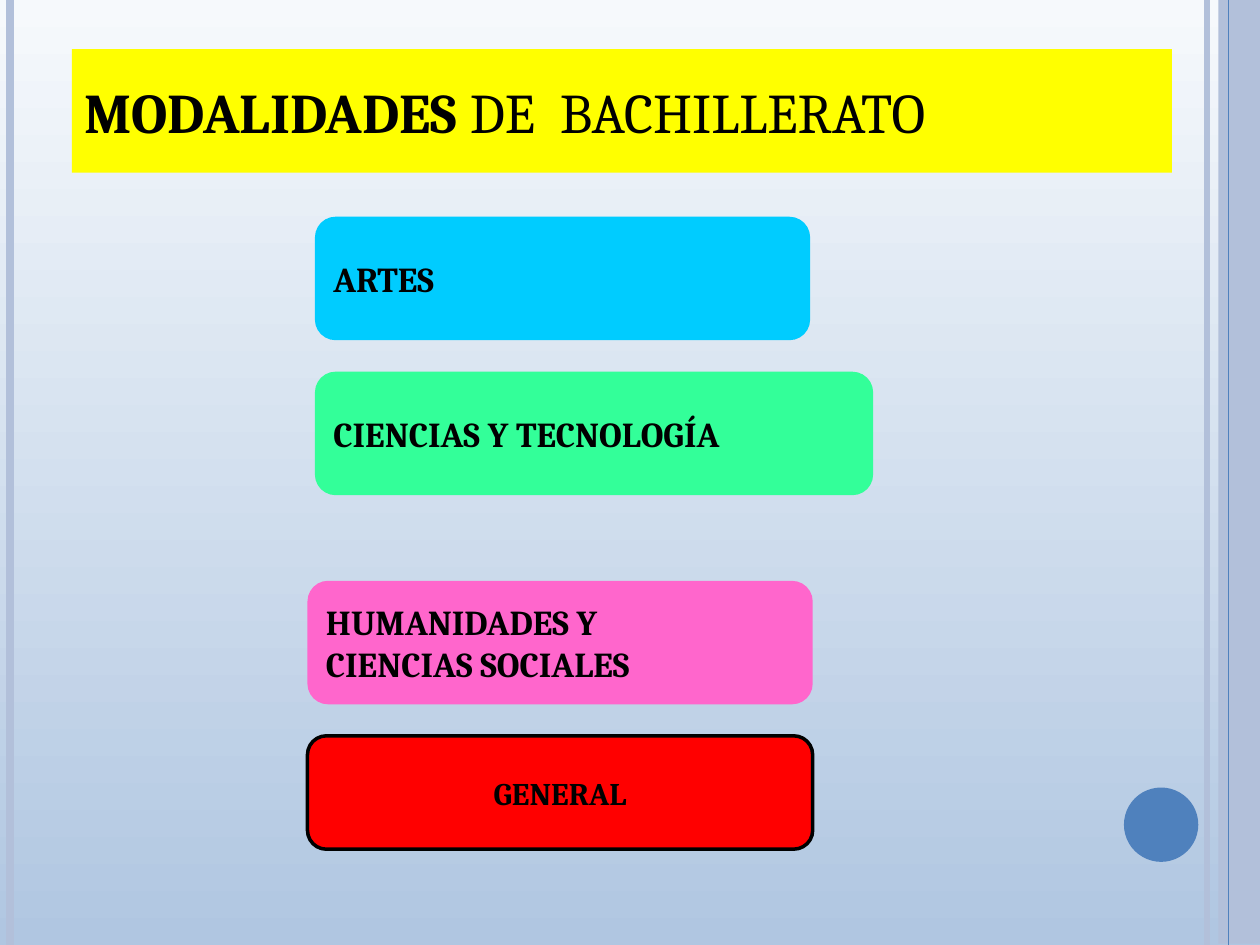
"""Build a slide that lists the kinds of bachillerato."""
from lxml.etree import SubElement
from pptx import Presentation
from pptx.dml.color import RGBColor
from pptx.enum.shapes import MSO_CONNECTOR, MSO_SHAPE
from pptx.enum.text import MSO_ANCHOR, PP_ALIGN
from pptx.oxml.ns import qn
from pptx.util import Inches, Pt

BLACK = RGBColor(0, 0, 0)
YELLOW = RGBColor(0xFF, 0xFF, 0)
CYAN = RGBColor(0, 0xCC, 0xFF)
GREEN = RGBColor(0x33, 0xFF, 0x99)
PINK = RGBColor(0xFF, 0x66, 0xCC)
RED = RGBColor(0xFF, 0, 0)
BLUE = RGBColor(0x4F, 0x81, 0xBD)
PALE = RGBColor(0xB2, 0xC0, 0xDA)
SKY = (RGBColor(0xF6, 0xF9, 0xFC), RGBColor(0xB0, 0xC6, 0xE1))

WIDE, HIGH = 10, 7.5
TITLE = [("MODALIDADES", True), (" DE  BACHILLERATO", False)]
SOFT = MSO_SHAPE.FLOWCHART_ALTERNATE_PROCESS
ROUND = MSO_SHAPE.ROUNDED_RECTANGLE
MODES = [
    (["CIENCIAS Y TECNOLOGÍA"], SOFT, (2.5, 2.95, 4.43, 0.98), GREEN, 20),
    (["HUMANIDADES Y", "CIENCIAS SOCIALES"], SOFT, (2.44, 4.61, 4.01, 0.98), PINK, 20),
    (["ARTES"], SOFT, (2.5, 1.72, 3.93, 0.98), CYAN, 20),
    (["GENERAL"], ROUND, (2.44, 5.84, 4.01, 0.9), RED, 18),
]
RULES = [(9.58, PALE, 3), (0.08, PALE, 4.5)]
EDGE = (9.75, BLUE, 0.75)
BAND = (9.67, 0, 0.33, 7.49)
DOT = (8.92, 6.25, 0.59, 0.59)
FRAME = {
    "word_wrap": True,
    "vertical_anchor": MSO_ANCHOR.MIDDLE,
    "margin_left": Inches(0.1),
    "margin_right": Inches(0.1),
    "margin_top": Inches(0.05),
    "margin_bottom": Inches(0.05),
}


def apply(item, values):
    for name, value in values.items():
        setattr(item, name, value)


def paint(shape, color):
    shape.fill.solid()
    shape.fill.fore_color.rgb = color


def add_run(para, text, size, bold=True):
    run = para.add_run()
    run.text = text
    apply(run.font, {"name": "Cambria", "size": Pt(size), "bold": bold})
    run.font.color.rgb = BLACK


def add_rule(slide, left, color, width):
    rule = slide.shapes.add_connector(
        MSO_CONNECTOR.STRAIGHT, Inches(left), 0, Inches(left), Inches(HIGH))
    rule.line.color.rgb = color
    rule.line.width = Pt(width)
    SubElement(rule.element.spPr, qn("a:effectLst"))


def add_form(slide, kind, box, color):
    form = slide.shapes.add_shape(kind, *map(Inches, box))
    form.shadow.inherit = False
    paint(form, color)
    form.line.fill.background()
    return form


def add_mode(slide, lines, kind, box, color, size):
    form = add_form(slide, kind, box, color)
    align = PP_ALIGN.LEFT
    if kind == ROUND:
        align = PP_ALIGN.CENTER
        form.line.color.rgb = BLACK
        form.line.width = Pt(2)
    frame = form.text_frame
    apply(frame, FRAME)
    for index, text in enumerate(lines):
        para = frame.add_paragraph() if index else frame.paragraphs[0]
        para.alignment = align
        add_run(para, text, size)


def add_title(slide):
    title = slide.shapes.title
    spot = zip(("left", "top", "width", "height"), (0.57, 0.39, 8.73, 0.98))
    apply(title, {name: Inches(value) for name, value in spot})
    paint(title, YELLOW)
    apply(title.text_frame, FRAME)
    para = title.text_frame.paragraphs[0]
    para.alignment = PP_ALIGN.LEFT
    for text, bold in TITLE:
        add_run(para, text, 32, bold)


def add_sky(slide):
    fill = slide.background.fill
    fill.gradient()
    fill.gradient_angle = 270
    for place, (stop, color) in enumerate(zip(fill.gradient_stops, SKY)):
        stop.position = place
        stop.color.rgb = color


def main():
    deck = Presentation()
    apply(deck, {"slide_width": Inches(WIDE), "slide_height": Inches(HIGH)})
    slide = deck.slides.add_slide(deck.slide_layouts[5])
    add_sky(slide)
    for rule in RULES:
        add_rule(slide, *rule)
    add_form(slide, MSO_SHAPE.RECTANGLE, BAND, PALE)
    add_rule(slide, *EDGE)
    add_form(slide, MSO_SHAPE.OVAL, DOT, BLUE)
    add_title(slide)
    for mode in MODES:
        add_mode(slide, *mode)
    deck.save("out.pptx")


if __name__ == "__main__":
    main()
